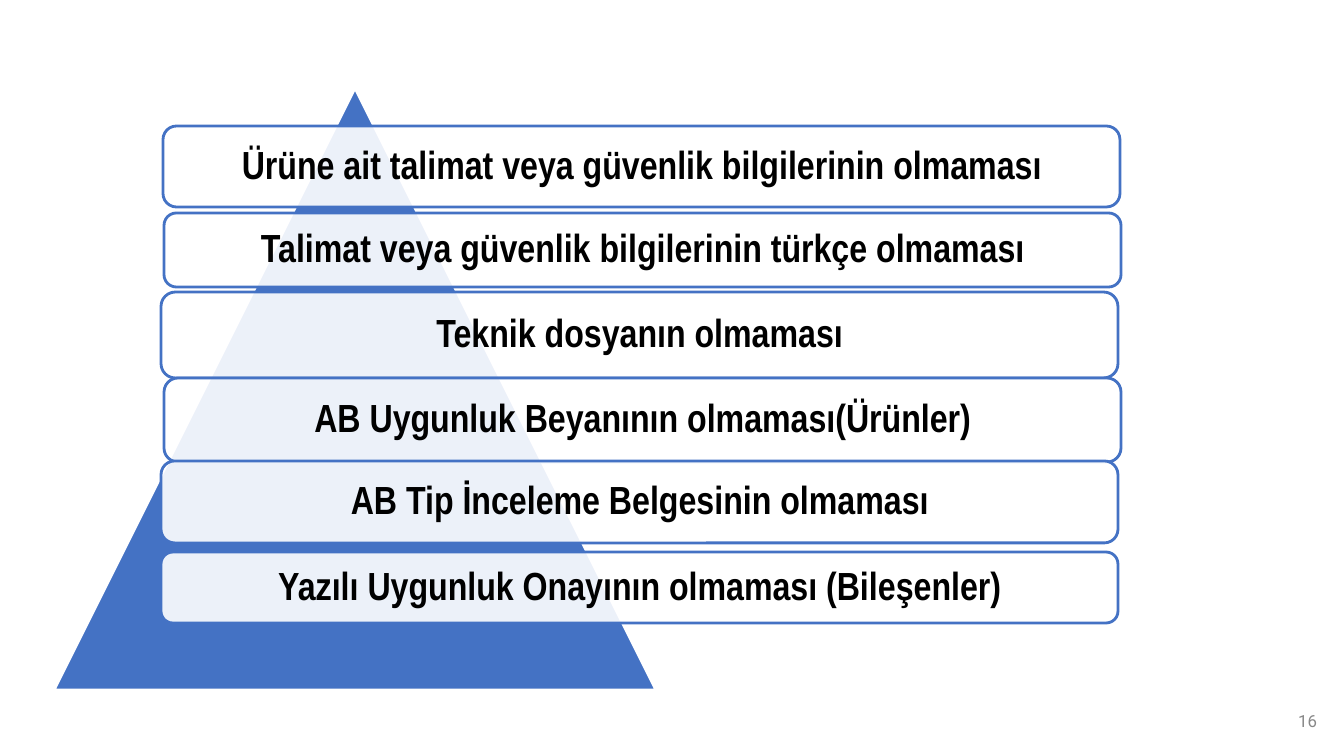
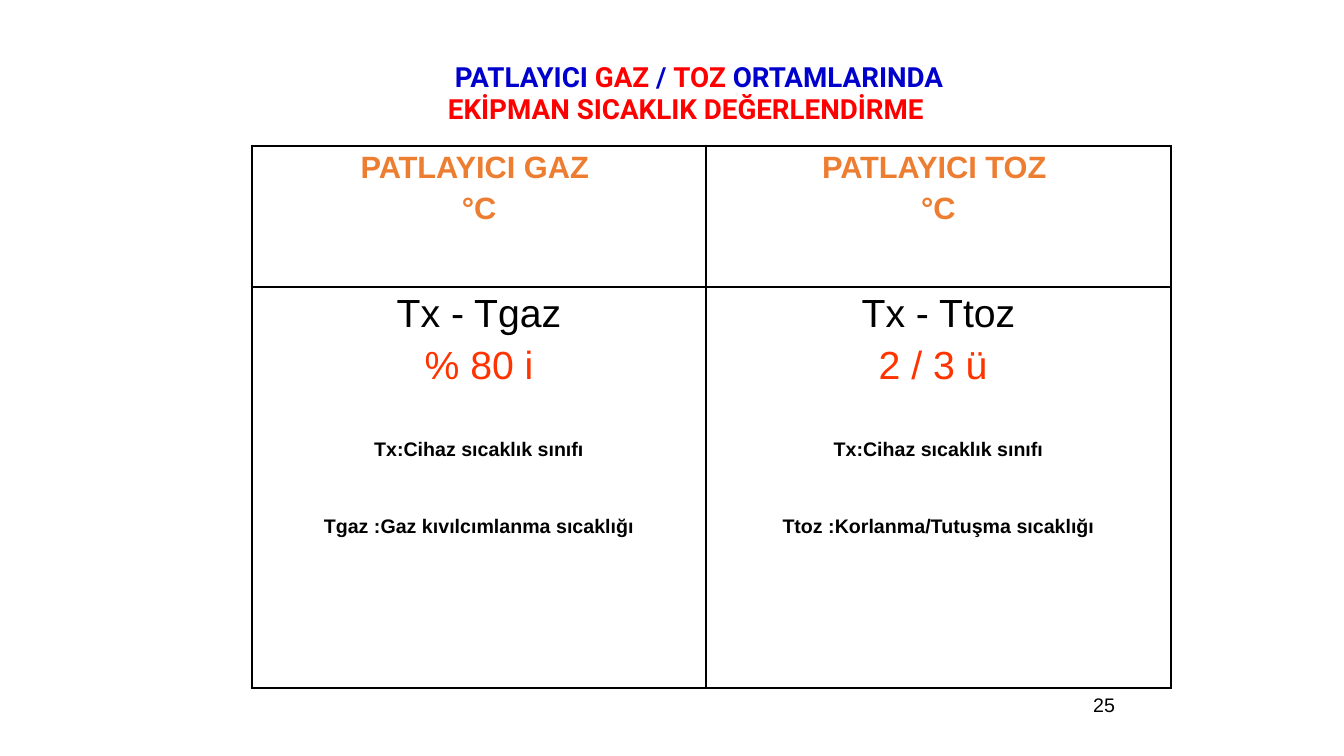
"""Build two slides: missing conformity documents and equipment temperature limits."""
from lxml.etree import SubElement
from pptx import Presentation
from pptx.dml.color import RGBColor
from pptx.enum.shapes import MSO_SHAPE as Preset
from pptx.enum.text import MSO_ANCHOR as Anchor, MSO_AUTO_SIZE as AutoSize, PP_ALIGN as Align
from pptx.oxml import parse_xml
from pptx.oxml.ns import nsdecls, qn
from pptx.util import Emu, Pt

WHITE = RGBColor(0xFF, 0xFF, 0xFF)
BLACK = RGBColor(0x00, 0x00, 0x00)
GREY = RGBColor(0x88, 0x88, 0x88)
BLUE = RGBColor(0x44, 0x72, 0xC4)
NAVY = RGBColor(0x00, 0x00, 0xCC)
RED = RGBColor(0xFF, 0x00, 0x00)
SCARLET = RGBColor(0xFF, 0x33, 0x00)
ORANGE = RGBColor(0xED, 0x7D, 0x31)

WIDTH, HEIGHT = 1344, 756
SCALE = 12192000 / WIDTH

TITLE_FONT = {"name": "Roboto", "size": Pt(19.8), "bold": True}
BOX_FONT = {"name": "Arial Narrow", "size": Pt(28), "bold": True}
HEADER_FONT = {"name": "Arial", "size": Pt(22), "bold": True}
FORMULA_FONT = {"name": "Arial", "size": Pt(28), "bold": False}
LEGEND_FONT = {"name": "Arial", "size": Pt(14), "bold": True}


def px(length):
    return Emu(round(length * SCALE))


def write(paragraph, runs, font, layout):
    for key, value in layout.items():
        setattr(paragraph, key, value)
    for text, color in runs:
        run = paragraph.add_run()
        run.text = text
        for key, value in font.items():
            setattr(run.font, key, value)
        run.font.color.rgb = color


deck = Presentation()
deck.slide_width, deck.slide_height = px(WIDTH), px(HEIGHT)

missing_slide = deck.slides.add_slide(deck.slide_layouts[6])
pyramid = (Preset.ISOSCELES_TRIANGLE, (54, 88, 602, 602), BLUE, WHITE, "")
findings = [
    (163, 126, 81, "Ürüne ait talimat veya güvenlik bilgilerinin olmaması"),
    (164, 213, 74, "Talimat veya güvenlik bilgilerinin türkçe olmaması"),
    (161, 292, 86, "Teknik dosyanın olmaması"),
    (164, 378, 84, "AB Uygunluk Beyanının olmaması(Ürünler)"),
    (161, 461, 82, "AB Tip İnceleme Belgesinin olmaması"),
    (161, 552, 71, "Yazılı Uygunluk Onayının olmaması (Bileşenler)"),
]
boxes = [
    (Preset.ROUNDED_RECTANGLE, (left, top, 957, height), WHITE, BLUE, text)
    for left, top, height, text in findings
]
for preset, bounds, fill, outline, text in [pyramid, *boxes]:
    part = missing_slide.shapes.add_shape(preset, *map(px, bounds))
    part.shadow.inherit = False
    part.fill.solid()
    part.fill.fore_color.rgb = fill
    part.line.color.rgb = outline
    part.line.width = Pt(2)
    if text:
        fill_color = part.fill._xPr.find(qn("a:solidFill"))[0]
        SubElement(fill_color, qn("a:alpha"), val="90000")
        frame = part.text_frame
        frame.word_wrap = True
        frame.vertical_anchor = Anchor.MIDDLE
        for side in ("left", "top", "right", "bottom"):
            setattr(frame, f"margin_{side}", px(12))
        write(frame.paragraphs[0], [(text, BLACK)], BOX_FONT,
              {"alignment": Align.CENTER, "line_spacing": 0.9})

heat_slide = deck.slides.add_slide(deck.slide_layouts[5])
title = heat_slide.shapes.title
title.left, title.top, title.width, title.height = map(px, (252, 60, 907, 66))
heading = title.text_frame
heading.word_wrap = True
heading.auto_size = AutoSize.NONE
heading.vertical_anchor = Anchor.MIDDLE
for side in ("left", "top", "right", "bottom"):
    setattr(heading, f"margin_{side}", 0)
title_lines = [
    (203, [("PATLAYICI ", NAVY), ("GAZ", RED), (" / ", NAVY), ("TOZ", RED),
           (" ORTAMLARINDA", NAVY)]),
    (196, [("EKİPMAN SICAKLIK DEĞERLENDİRME", RED)]),
]
for index, (indent, runs) in enumerate(title_lines):
    line = heading.add_paragraph() if index else heading.paragraphs[0]
    line._p.get_or_add_pPr().set("marL", str(px(indent)))
    write(line, runs, TITLE_FONT,
          {"alignment": Align.LEFT, "line_spacing": Pt(23), "space_before": Pt(0)})

headers = ["PATLAYICI GAZ ", "PATLAYICI TOZ "]
limits = [
    ("Tx - Tgaz", "% 80 i", "Tgaz :Gaz kıvılcımlanma sıcaklığı"),
    ("Tx - Ttoz", "2 / 3 ü ", "Ttoz :Korlanma/Tutuşma sıcaklığı"),
]
cell_rows = [
    [[(header, HEADER_FONT, ORANGE, 0), ("°C", HEADER_FONT, ORANGE, 6)] for header in headers],
    [[(formula, FORMULA_FONT, BLACK, 0),
      (share, FORMULA_FONT, SCARLET, 8),
      ("Tx:Cihaz sıcaklık sınıfı", LEGEND_FONT, BLACK, 51),
      (legend, LEGEND_FONT, BLACK, 55)] for formula, share, legend in limits],
]
column_widths, row_heights = (454, 465), (141, 401)
table = heat_slide.shapes.add_table(
    2, 2, *map(px, (252, 146, sum(column_widths), sum(row_heights)))).table
table.first_row = table.horz_banding = False
for column, width in zip(table.columns, column_widths):
    column.width = px(width)
for row, height in zip(table.rows, row_heights):
    row.height = px(height)

for row_index, cell_row in enumerate(cell_rows):
    for column_index, lines in enumerate(cell_row):
        cell = table.cell(row_index, column_index)
        cell.vertical_anchor = Anchor.TOP
        cell.fill.background()
        for index, (text, font, color, gap) in enumerate(lines):
            frame = cell.text_frame
            line = frame.add_paragraph() if index else frame.paragraphs[0]
            write(line, [(text, color)], font,
                  {"alignment": Align.CENTER, "space_before": px(gap)})
        outer_edges = {"L": column_index == 0, "R": column_index == 1,
                       "T": row_index == 0, "B": row_index == 1}
        for position, (edge, is_outer) in enumerate(outer_edges.items()):
            border = parse_xml(
                f'<a:ln{edge} {nsdecls("a")} w="{Pt(2.25 if is_outer else 1)}">'
                f'<a:solidFill><a:srgbClr val="{BLACK}"/></a:solidFill></a:ln{edge}>')
            cell._tc.get_or_add_tcPr().insert(position, border)

page_numbers = [
    (missing_slide, (1025, 701, 302, 40), "16", GREY, Anchor.MIDDLE,
     {"name": "Roboto", "size": Pt(12)}),
    (heat_slide, (890, 688, 235, 52), "25", BLACK, Anchor.TOP,
     {"name": "Arial", "size": Pt(14)}),
]
for slide, bounds, number, color, anchor, font in page_numbers:
    frame = slide.shapes.add_textbox(*map(px, bounds)).text_frame
    frame.word_wrap = True
    frame.vertical_anchor = anchor
    write(frame.paragraphs[0], [(number, color)], font, {"alignment": Align.RIGHT})

deck.save("out.pptx")
